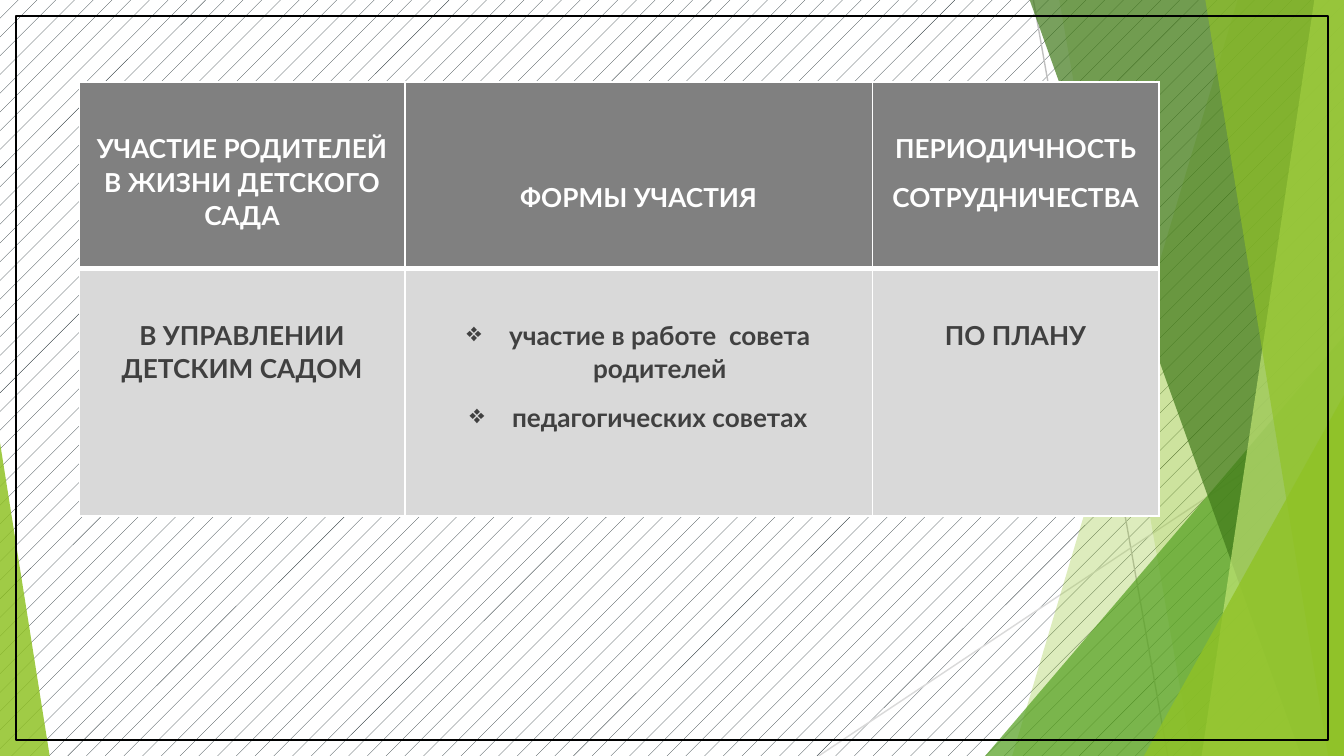
import lxml.etree
import pptx
import pptx.dml.color
import pptx.enum.dml
import pptx.enum.shapes
import pptx.enum.text
import pptx.oxml.ns
import pptx.util

Cm = pptx.util.Cm
Pt = pptx.util.Pt
RGBColor = pptx.dml.color.RGBColor
SHAPES = pptx.enum.shapes.MSO_SHAPE
qn = pptx.oxml.ns.qn

WHITE = RGBColor(0xFF, 0xFF, 0xFF)
BLACK = RGBColor(0x00, 0x00, 0x00)
HATCH = RGBColor(0x21, 0x2D, 0x32)
LIME = RGBColor(0x90, 0xC2, 0x26)
PALE_LIME = RGBColor(0xC0, 0xE4, 0x74)
GREEN = RGBColor(0x54, 0xA0, 0x21)
DARK_GREEN = RGBColor(0x3F, 0x78, 0x19)
SILVER = RGBColor(0xBF, 0xBF, 0xBF)
LIGHT_GREY = RGBColor(0xD9, 0xD9, 0xD9)
HEADER_GREY = RGBColor(0x80, 0x80, 0x80)
BODY_TEXT = RGBColor(0x40, 0x40, 0x40)

FONT = "Lato"
BLANK_LINE = Cm(0.92)
BULLET_INDENT = Cm(0.8)

# Text, number of lines left free above it, bulleted or not
HEADER = [
    ("УЧАСТИЕ РОДИТЕЛЕЙ\vВ ЖИЗНИ ДЕТСКОГО САДА", 1, False),
    ("ФОРМЫ УЧАСТИЯ", 2, False),
    ("ПЕРИОДИЧНОСТЬ\nСОТРУДНИЧЕСТВА", 1, False),
]
BODY = [
    ("В УПРАВЛЕНИИ ДЕТСКИМ САДОМ", 1, False),
    ("участие в работе  совета родителей\nпедагогических советах", 1, True),
    ("ПО ПЛАНУ", 1, False),
]


def fill_translucent(shape, color, opacity):
    shape.shadow.inherit = False
    shape.line.fill.background()
    shape.fill.solid()
    shape.fill.fore_color.rgb = color
    srgb = shape.fill._xPr.find(qn("a:solidFill")).find(qn("a:srgbClr"))
    lxml.etree.SubElement(srgb, qn("a:alpha"), val=str(opacity * 1000))


def add_ray(slide, start, end, color):
    ray = slide.shapes.add_connector(
        pptx.enum.shapes.MSO_CONNECTOR.STRAIGHT, *start, *end)
    ray.line.color.rgb = color
    ray.line.width = Pt(0.75)
    lxml.etree.SubElement(ray._element.spPr, qn("a:effectLst"))


def add_band(slide, box, top_x, bottom_x, color, opacity):
    """Fill the box to the right of a slanted edge running from its top to its bottom."""
    left, top, width, height = box
    right, bottom = left + width, top + height
    builder = slide.shapes.build_freeform(left + Cm(top_x), top)
    builder.add_line_segments(
        [(right, top), (right, bottom), (left + Cm(bottom_x), bottom)])
    fill_translucent(builder.convert_to_shape(), color, opacity)


def add_corner(slide, box, width, height, at_right, color, opacity):
    """Place a right triangle in a bottom corner of the box."""
    left = box[0] + box[2] - width if at_right else box[0]
    corner = slide.shapes.add_shape(
        SHAPES.ISOSCELES_TRIANGLE, left, box[1] + box[3] - height, width, height)
    corner.adjustments[0] = 1 if at_right else 0
    fill_translucent(corner, color, opacity)


def add_facets(slide, box):
    left, top, width, height = box
    right, bottom = left + width, top + height
    add_ray(slide, (left + Cm(19.53), top), (left + Cm(22.07), bottom), SILVER)
    add_ray(slide, (right, top + Cm(7.67)), (left + Cm(15.47), bottom), LIGHT_GREY)
    add_band(slide, box, 23.39, 19.13, LIME, 30)
    add_band(slide, box, 20.02, 22.53, LIME, 20)
    add_corner(slide, box, Cm(6.78), Cm(7.94), True, GREEN, 72)
    add_band(slide, box, 19.46, 24.59, DARK_GREEN, 70)
    add_band(slide, box, 24.84, 22.71, PALE_LIME, 70)
    add_band(slide, box, 22.78, 25.1, LIME, 65)
    add_corner(slide, box, Cm(3.78), Cm(6.82), True, LIME, 80)
    add_corner(slide, box, Cm(0.94), Cm(5.93), False, LIME, 85)


def add_frame(slide, box):
    frame = slide.shapes.add_shape(SHAPES.RECTANGLE, *box)
    frame.shadow.inherit = False
    frame.fill.background()
    frame.line.color.rgb = BLACK
    frame.line.width = Pt(1)


def set_borders(cell, top_width, bottom_width):
    properties = cell._tc.get_or_add_tcPr()
    widths = {"lnL": 1, "lnR": 1, "lnT": top_width, "lnB": bottom_width}
    for position, (side, width) in enumerate(widths.items()):
        border = lxml.etree.Element(qn("a:" + side), w=str(Pt(width)))
        solid = lxml.etree.SubElement(border, qn("a:solidFill"))
        lxml.etree.SubElement(solid, qn("a:srgbClr"), val=str(WHITE))
        properties.insert(position, border)


def add_bullet(paragraph):
    properties = paragraph._p.get_or_add_pPr()
    properties.set("marL", str(BULLET_INDENT))
    properties.set("indent", str(-BULLET_INDENT))
    lxml.etree.SubElement(properties, qn("a:buChar"), char="❖")


def write_cell(cell, text, lines_above, bulleted, color):
    cell.margin_left = cell.margin_right = Cm(0.18)
    cell.margin_top = lines_above * BLANK_LINE
    cell.margin_bottom = 0
    cell.text_frame.text = text
    for paragraph in cell.text_frame.paragraphs:
        paragraph.alignment = pptx.enum.text.PP_ALIGN.CENTER
        paragraph.line_spacing = 1.07
        paragraph.space_after = Pt(8)
        if bulleted:
            add_bullet(paragraph)
        for run in paragraph.runs:
            run.font.name = FONT
            run.font.size = Pt(14)
            run.font.bold = True
            run.font.color.rgb = color


def add_participation_table(slide, box):
    left, top, width, height = box
    table = slide.shapes.add_table(2, 3, left, top, width, height).table
    first, second = Cm(6.15), Cm(8.84)
    for column, column_width in zip(
            table.columns, (first, second, width - first - second)):
        column.width = column_width
    header_height = Cm(3.53)
    table.rows[0].height = header_height
    table.rows[1].height = height - header_height

    row_styles = [(HEADER, HEADER_GREY, WHITE, 1, 3),
                  (BODY, LIGHT_GREY, BODY_TEXT, 3, 1)]
    for row, (entries, fill, color, top_width, bottom_width) in zip(
            table.rows, row_styles):
        for cell, (text, lines_above, bulleted) in zip(row.cells, entries):
            cell.fill.solid()
            cell.fill.fore_color.rgb = fill
            set_borders(cell, top_width, bottom_width)
            write_cell(cell, text, lines_above, bulleted, color)


def set_background(slide):
    fill = slide.background.fill
    fill.patterned()
    fill.pattern = pptx.enum.dml.MSO_PATTERN.PERCENT_5
    fill.fore_color.rgb = HATCH
    fill.back_color.rgb = WHITE


def main():
    presentation = pptx.Presentation()
    presentation.slide_width = Cm(25.4)
    presentation.slide_height = Cm(14.29)
    slide = presentation.slides.add_slide(presentation.slide_layouts[6])
    set_background(slide)
    add_facets(slide, (0, 0, presentation.slide_width, presentation.slide_height))
    add_frame(slide, (Cm(0.3), Cm(0.3), Cm(24.8), Cm(13.69)))
    add_participation_table(slide, (Cm(1.5), Cm(1.55), Cm(20.4), Cm(8.2)))
    presentation.save("out.pptx")


if __name__ == "__main__":
    main()
